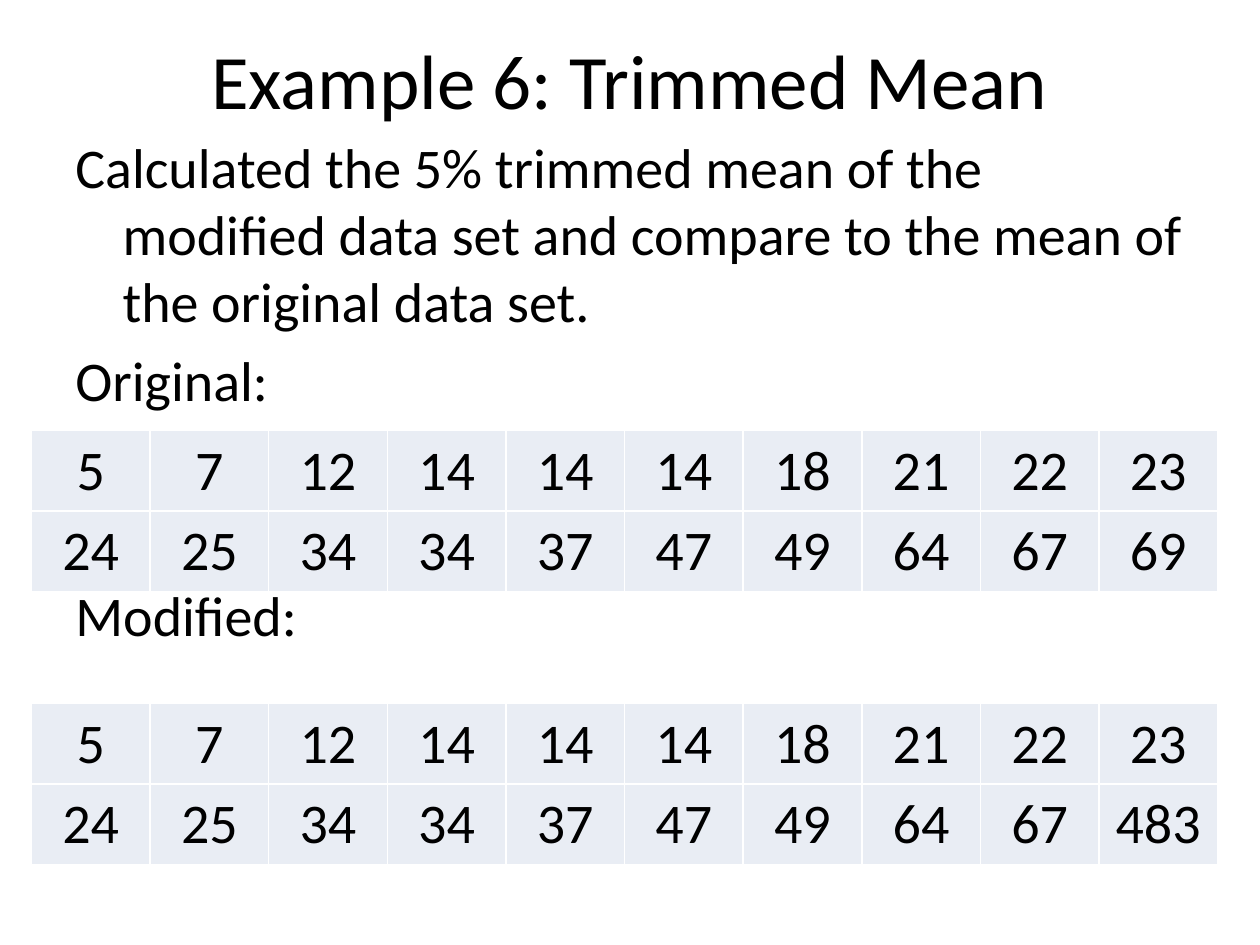
from lxml import etree
from pptx import Presentation
from pptx.dml.color import RGBColor
from pptx.enum import text
from pptx.oxml import ns
from pptx.util import Pt

BLACK = RGBColor(0x00, 0x00, 0x00)
WHITE = RGBColor(0xFF, 0xFF, 0xFF)
PALE_BLUE = RGBColor(0xE9, 0xED, 0xF4)
FONT = "Calibri"

SHARED_VALUES = [5, 7, 12, 14, 14, 14, 18, 21, 22, 23,
                 24, 25, 34, 34, 37, 47, 49, 64, 67]
QUESTION = ("Calculated the 5% trimmed mean of the modified data set "
            "and compare to the mean of the original data set.")


def add_words(paragraph, words, size):
    """Add one run in the slide's font and colour."""
    run = paragraph.add_run()
    run.text = words
    run.font.name = FONT
    run.font.size = Pt(size)
    run.font.color.rgb = BLACK


def add_frame(slide, left, top, width, height):
    """Add a wrapping text box and return its text frame."""
    box = slide.shapes.add_textbox(Pt(left), Pt(top), Pt(width), Pt(height))
    box.text_frame.word_wrap = True
    return box.text_frame


def add_title(slide, left, top, width, height):
    """Place the centred heading in the given box."""
    heading = add_frame(slide, left, top, width, height)
    heading.vertical_anchor = text.MSO_ANCHOR.MIDDLE
    heading.paragraphs[0].alignment = text.PP_ALIGN.CENTER
    add_words(heading.paragraphs[0], "Example 6: Trimmed Mean", 44)


def add_body(slide, left, top, width, height):
    """Place the question and the two data set labels with hanging indents."""
    body = add_frame(slide, left, top, width, height)
    lines = [(QUESTION, 6.4), ("Original:", 6.4), ("Modified:", 96)]
    for index, (words, gap) in enumerate(lines):
        paragraph = body.add_paragraph() if index else body.paragraphs[0]
        paragraph.space_before = Pt(gap)
        properties = paragraph._p.get_or_add_pPr()
        properties.set("marL", str(Pt(27)))
        properties.set("indent", str(Pt(-27)))
        add_words(paragraph, words, 32)


def add_borders(cell):
    """Draw thin white lines on all four sides of a cell."""
    properties = cell._tc.get_or_add_tcPr()
    for position, side in enumerate(("a:lnL", "a:lnR", "a:lnT", "a:lnB")):
        line = etree.Element(ns.qn(side), w=str(Pt(1)))
        fill = etree.SubElement(line, ns.qn("a:solidFill"))
        etree.SubElement(fill, ns.qn("a:srgbClr"), val=str(WHITE))
        properties.insert(position, line)


def add_data_set(slide, values, left, top, width, height, columns=10):
    """Place the values in an evenly divided table."""
    rows = len(values) // columns
    frame = slide.shapes.add_table(rows, columns, Pt(left), Pt(top),
                                   Pt(width), Pt(height))
    grid = frame.table
    grid.first_row = False
    grid.horz_banding = False
    for index, value in enumerate(values):
        cell = grid.cell(*divmod(index, columns))
        cell.fill.solid()
        cell.fill.fore_color.rgb = PALE_BLUE
        cell.vertical_anchor = text.MSO_ANCHOR.MIDDLE
        add_borders(cell)
        paragraph = cell.text_frame.paragraphs[0]
        paragraph.alignment = text.PP_ALIGN.CENTER
        add_words(paragraph, str(value), 32)


def main():
    """Build the trimmed mean slide."""
    deck = Presentation()
    deck.slide_width, deck.slide_height = Pt(720), Pt(540)
    slide = deck.slides.add_slide(deck.slide_layouts[6])
    add_title(slide, 36, 0, 648, 90)
    add_body(slide, 36, 72, 648, 456)
    for last_value, top in ((69, 246), (483, 402)):
        add_data_set(slide, SHARED_VALUES + [last_value], 18, top, 678, 92)
    deck.save("out.pptx")


if __name__ == "__main__":
    main()
